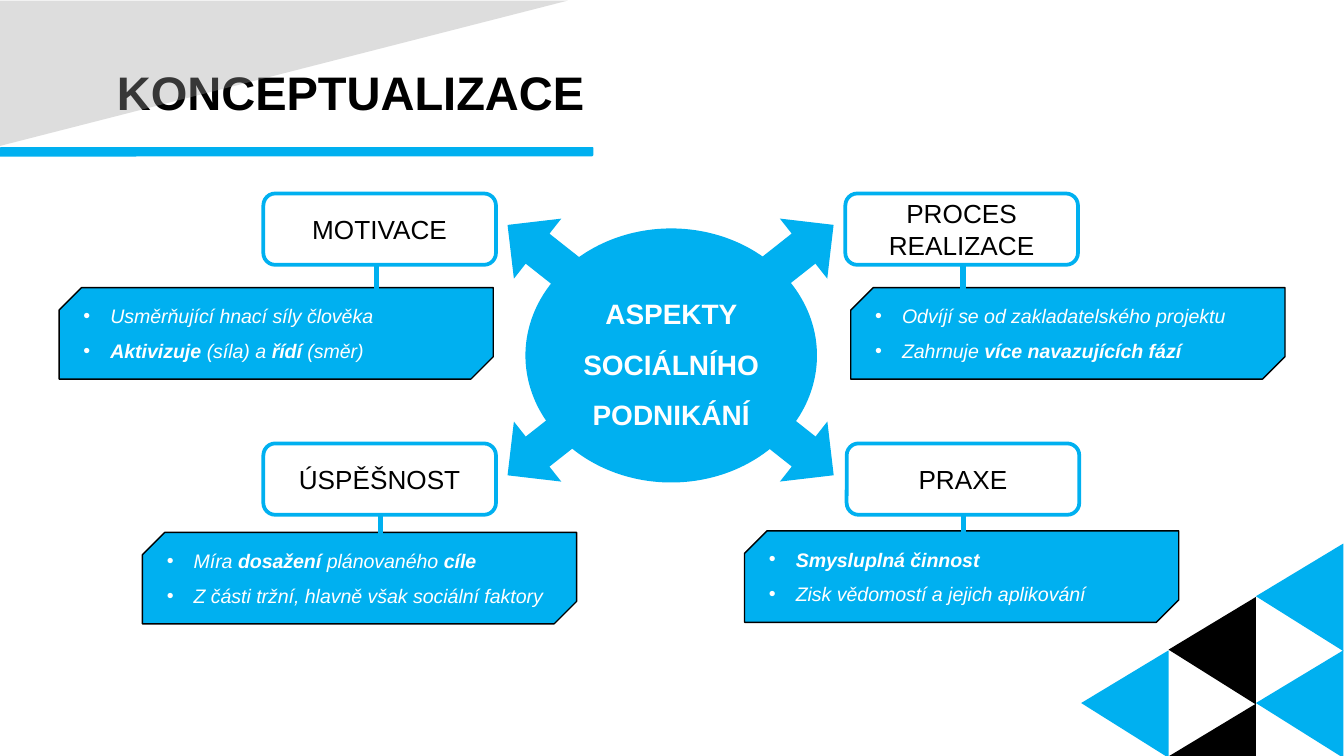
import pptx
import pptx.util
import pptx.dml.color
import pptx.enum.shapes
import pptx.enum.text
import pptx.oxml.ns
from lxml import etree

Pt = pptx.util.Pt
RGBColor = pptx.dml.color.RGBColor
SHAPE = pptx.enum.shapes.MSO_SHAPE
ALIGN = pptx.enum.text.PP_ALIGN
ANCHOR = pptx.enum.text.MSO_ANCHOR
qn = pptx.oxml.ns.qn

BLUE = RGBColor(0x00, 0xB0, 0xF0)
BLACK = RGBColor(0x00, 0x00, 0x00)
WHITE = RGBColor(0xFF, 0xFF, 0xFF)
GRAY = RGBColor(0x9E, 0x9E, 0x9E)

FONT = "Arial"
LABEL_SIZE = (124.6, 38.2)
DETAIL_SIZE = (232.6, 49)
ARROW_SIZE = (44.6, 41)
TRIANGLE_SIZE = (57.6, 46.8)

# Label, its position, details position, stem x, paragraphs of (text, bold) runs
ASPECTS = [
    ("MOTIVACE", (141.1, 103.7), (31.7, 154.1), 201.6, [
        [("Usměrňující hnací síly člověka", False)],
        [("Aktivizuje ", True), ("(síla) a ", False),
         ("řídí ", True), ("(směr)", False)]]),
    ("PROCES REALIZACE", (452.9, 103.7), (455.8, 154.1), 516, [
        [("Odvíjí se od zakladatelského projektu", False)],
        [("Zahrnuje ", False), ("více navazujících fází", True)]]),
    ("ÚSPĚŠNOST", (141.1, 237.6), (76.3, 285.2), 203.8, [
        [("Míra ", False), ("dosažení", True),
         (" plánovaného ", False), ("cíle", True)],
        [("Z části tržní, hlavně však sociální faktory", False)]]),
    ("PRAXE", (453.6, 237.6), (398.9, 284.4), 516.2, [
        [("Smysluplná činnost", True)],
        [("Zisk vědomostí a jejich aplikování", False)]]),
]

# Left, top and rotation of the arrows around the centre
ARROWS = [(267.1, 113.8, 218.3), (406.8, 113.8, 321.7),
          (267.1, 220.3, 141.7), (406.8, 220.3, 38.3)]

# Column, half-row and colour of the corner triangles
TRIANGLES = [(2, 0, BLUE), (2, -2, BLUE), (1, -1, BLACK),
             (0, 0, BLUE), (1, 1, BLACK)]


def set_all(obj, **values):
    for name, value in values.items():
        setattr(obj, name, value)


def add_shape(s, kind, pos, size, fill=None, line=None, weight=0.75,
              rotation=0, adj=()):
    sp = s.shapes.add_shape(kind, *(Pt(v) for v in (*pos, *size)))
    sp.shadow.inherit = False
    sp.rotation = rotation
    for i, value in enumerate(adj):
        sp.adjustments[i] = value
    if fill is None:
        sp.fill.background()
    else:
        sp.fill.solid()
        sp.fill.fore_color.rgb = fill
    if line is None:
        sp.line.fill.background()
    else:
        sp.line.color.rgb = line
        sp.line.width = Pt(weight)
    return sp


def add_run(p, text, size, color, **fmt):
    r = p.add_run()
    r.text = text
    set_all(r.font, name=FONT, size=Pt(size), **fmt)
    r.font.color.rgb = color


def add_centered_text(sp, text, size, color, spacing=1.0, **fmt):
    tf = sp.text_frame
    set_all(tf, word_wrap=True, vertical_anchor=ANCHOR.MIDDLE,
            margin_left=Pt(6), margin_right=Pt(6))
    p = tf.paragraphs[0]
    set_all(p, alignment=ALIGN.CENTER, line_spacing=spacing)
    add_run(p, text, size, color, **fmt)


def add_bullet(p):
    pPr = p._p.get_or_add_pPr()
    pPr.set("marL", str(Pt(14.4)))
    pPr.set("indent", str(Pt(-14.4)))
    clr = etree.SubElement(pPr, qn("a:buClr"))
    etree.SubElement(clr, qn("a:srgbClr"), val=str(WHITE))
    etree.SubElement(pPr, qn("a:buFont"), typeface=FONT)
    etree.SubElement(pPr, qn("a:buChar"), char="•")


def add_details(s, pos, paragraphs):
    sp = add_shape(s, SHAPE.SNIP_2_DIAG_RECTANGLE, pos, DETAIL_SIZE, BLUE,
                   line=BLACK, adj=(0.245, 0))
    tf = sp.text_frame
    set_all(tf, word_wrap=True, vertical_anchor=ANCHOR.MIDDLE)
    for i, runs in enumerate(paragraphs):
        p = tf.add_paragraph() if i else tf.paragraphs[0]
        p.alignment = ALIGN.LEFT
        p.space_after = Pt(0 if i else 6)
        add_bullet(p)
        for text, bold in runs:
            add_run(p, text, 10.5, WHITE, bold=bold, italic=True)


def add_label(s, text, pos):
    sp = add_shape(s, SHAPE.ROUNDED_RECTANGLE, pos, LABEL_SIZE,
                   line=BLUE, weight=2)
    add_centered_text(sp, text, 14, BLACK)


def add_stem(s, x, top):
    cxn = s.shapes.add_connector(pptx.enum.shapes.MSO_CONNECTOR.STRAIGHT,
                                 Pt(x), Pt(top + 17), Pt(x), Pt(top))
    cxn.line.color.rgb = BLUE
    cxn.line.width = Pt(3)
    etree.SubElement(cxn._element.spPr, qn("a:effectLst"))


def add_title(s, text):
    sp = s.shapes.title
    set_all(sp, left=Pt(55.4), top=Pt(26.6), width=Pt(671), height=Pt(45.4))
    tf = sp.text_frame
    set_all(tf, word_wrap=True, vertical_anchor=ANCHOR.MIDDLE)
    p = tf.paragraphs[0]
    p.alignment = ALIGN.LEFT
    add_run(p, text, 25.2, BLACK, bold=True)


def add_decoration(s):
    # Title underline and translucent corner wedge
    add_shape(s, SHAPE.ROUND_2_DIAG_RECTANGLE, (0, 79.2), (317.5, 4.3), BLUE,
              line=BLUE, adj=(0.167, 0))
    wedge = add_shape(s, SHAPE.RIGHT_TRIANGLE, (111.6, -113.8), (78.5, 306.7),
                      GRAY, rotation=90)
    color = wedge._element.spPr.find(".//" + qn("a:srgbClr"))
    etree.SubElement(color, qn("a:alpha"), val="35000")

    # Triangle mosaic in the lower right corner
    for col, row, fill in TRIANGLES:
        add_shape(s, SHAPE.ISOSCELES_TRIANGLE,
                  (573.8 + 46.8 * col, 353.8 + 28.6 * row), TRIANGLE_SIZE,
                  fill, rotation=270, adj=(0.51,))


def main():
    prs = pptx.Presentation()
    set_all(prs, slide_width=Pt(720), slide_height=Pt(405))
    s = prs.slides.add_slide(prs.slide_layouts[5])
    add_title(s, "KONCEPTUALIZACE")
    add_decoration(s)

    # Centre with four arrows
    hub = add_shape(s, SHAPE.OVAL, (281.5, 122.4), (156.2, 136.1), BLUE)
    add_centered_text(hub, "ASPEKTY SOCIÁLNÍHO PODNIKÁNÍ", 15, WHITE,
                      spacing=1.5, bold=True)
    for left, top, rotation in ARROWS:
        add_shape(s, SHAPE.RIGHT_ARROW, (left, top), ARROW_SIZE, BLUE,
                  rotation=rotation)

    # Four aspects, each with a label, details and a stem between them
    for label, label_pos, detail_pos, stem_x, paragraphs in ASPECTS:
        add_label(s, label, label_pos)
        add_details(s, detail_pos, paragraphs)
        add_stem(s, stem_x, label_pos[1] + LABEL_SIZE[1] - 0.5)

    prs.save("out.pptx")


if __name__ == "__main__":
    main()
